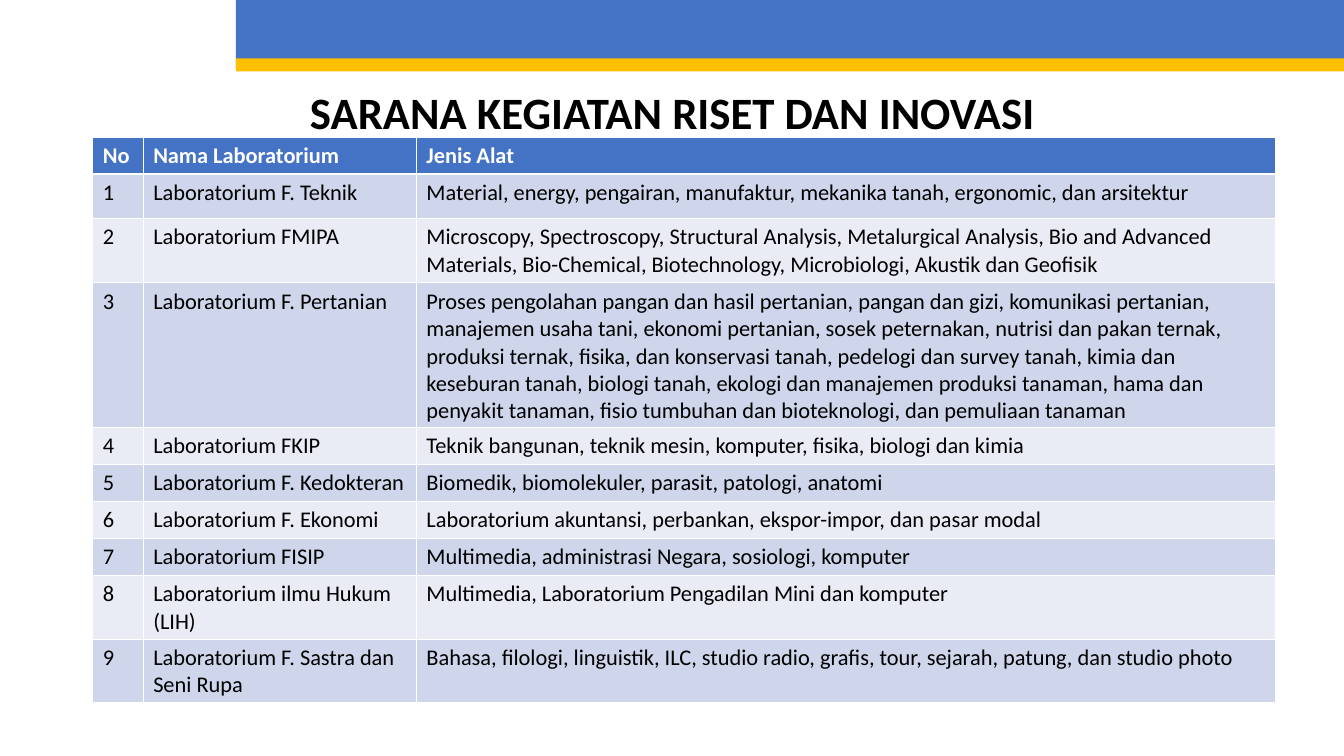
from dataclasses import dataclass

from pptx import Presentation
from pptx.dml.color import RGBColor
from pptx.enum.shapes import MSO_SHAPE
from pptx.enum.text import MSO_ANCHOR, PP_ALIGN
from pptx.util import Inches, Pt

RECTANGLE = MSO_SHAPE.RECTANGLE
MIDDLE = MSO_ANCHOR.MIDDLE
CENTER = PP_ALIGN.CENTER

SLIDE_WIDTH, SLIDE_HEIGHT = 13.33, 7.5
MARGIN = 0.92
BANNER_LEFT = 2.34
BANNER_WIDTH = SLIDE_WIDTH - BANNER_LEFT
COLUMN_WIDTHS = (0.5, 2.71, 8.52)
ROW_HEIGHT = 0.36
TALL_ROWS = {1: 0.44, 2: 0.64, 3: 0.62}


@dataclass(frozen=True)
class Theme:
    font: str = "Calibri"
    title_size: int = 32
    table_size: int = 16
    blue: str = "4472C4"
    gold: str = "FFC000"
    text: str = "000000"
    header_text: str = "FFFFFF"
    bands: tuple = ("CFD5EA", "E9EBF5")


THEME = Theme()

TITLE = "SARANA KEGIATAN RISET DAN INOVASI"
HEADER = ("No", "Nama Laboratorium", "Jenis Alat")
LABORATORIES = (
    ("Laboratorium F. Teknik",
     "Material, energy, pengairan, manufaktur, mekanika tanah, ergonomic, "
     "dan arsitektur"),
    ("Laboratorium FMIPA",
     "Microscopy, Spectroscopy, Structural Analysis, Metalurgical Analysis, "
     "Bio and Advanced Materials, Bio-Chemical, Biotechnology, Microbiologi, "
     "Akustik dan Geofisik"),
    ("Laboratorium F. Pertanian",
     "Proses pengolahan pangan dan hasil pertanian, pangan dan gizi, "
     "komunikasi pertanian, manajemen usaha tani, ekonomi pertanian, "
     "sosek peternakan, nutrisi dan pakan ternak, produksi ternak, fisika, "
     "dan konservasi tanah, pedelogi dan survey tanah, kimia dan keseburan "
     "tanah, biologi tanah, ekologi dan manajemen produksi tanaman, hama dan "
     "penyakit tanaman, fisio tumbuhan dan bioteknologi, dan pemuliaan tanaman"),
    ("Laboratorium FKIP",
     "Teknik bangunan, teknik mesin, komputer, fisika, biologi dan kimia"),
    ("Laboratorium F. Kedokteran",
     "Biomedik, biomolekuler, parasit, patologi, anatomi"),
    ("Laboratorium F. Ekonomi",
     "Laboratorium akuntansi, perbankan, ekspor-impor, dan pasar modal"),
    ("Laboratorium FISIP",
     "Multimedia, administrasi Negara, sosiologi, komputer"),
    ("Laboratorium ilmu Hukum (LIH)",
     "Multimedia, Laboratorium Pengadilan Mini dan komputer"),
    ("Laboratorium F. Sastra dan Seni Rupa",
     "Bahasa, filologi, linguistik, ILC, studio radio, grafis, tour, sejarah, "
     "patung, dan studio photo"),
)


def box(*lengths):
    return [Inches(length) for length in lengths]


def paint(target, color):
    target.fill.solid()
    target.fill.fore_color.rgb = RGBColor.from_string(color)


def write(paragraph, text, size, color, bold):
    run = paragraph.add_run()
    run.text = text
    formats = {"name": THEME.font, "size": Pt(size), "bold": bold}
    for name, value in formats.items():
        setattr(run.font, name, value)
    run.font.color.rgb = RGBColor.from_string(color)


def add_bar(slide, top, height, color):
    bar = slide.shapes.add_shape(
        RECTANGLE, *box(BANNER_LEFT, top, BANNER_WIDTH, height))
    bar.shadow.inherit = False
    bar.line.fill.background()
    paint(bar, color)


def add_title(slide):
    title = slide.shapes.add_textbox(*box(MARGIN, 0.74, 11.5, 0.8))
    frame = title.text_frame
    for name, value in {"word_wrap": True, "vertical_anchor": MIDDLE}.items():
        setattr(frame, name, value)
    paragraph = frame.paragraphs[0]
    for name, value in {"alignment": CENTER, "line_spacing": 0.9}.items():
        setattr(paragraph, name, value)
    write(paragraph, TITLE, THEME.title_size, THEME.text, True)


def add_laboratory_table(slide):
    numbered = [(str(number), *laboratory)
                for number, laboratory in enumerate(LABORATORIES, 1)]
    rows = [HEADER, *numbered]
    heights = [TALL_ROWS.get(index, ROW_HEIGHT) for index in range(len(rows))]
    table = slide.shapes.add_table(
        len(rows), len(HEADER),
        *box(MARGIN, 1.36, sum(COLUMN_WIDTHS), sum(heights))).table
    for column, width in zip(table.columns, COLUMN_WIDTHS):
        column.width = Inches(width)
    for index, (row, height, texts) in enumerate(zip(table.rows, heights, rows)):
        row.height = Inches(height)
        is_header = index == 0
        fill = THEME.blue if is_header else THEME.bands[(index - 1) % 2]
        color = THEME.header_text if is_header else THEME.text
        for cell, text in zip(row.cells, texts):
            paint(cell, fill)
            write(cell.text_frame.paragraphs[0], text,
                  THEME.table_size, color, is_header)


def main():
    presentation = Presentation()
    presentation.slide_width = Inches(SLIDE_WIDTH)
    presentation.slide_height = Inches(SLIDE_HEIGHT)
    slide = presentation.slides.add_slide(presentation.slide_layouts[6])

    # Banner
    add_bar(slide, 0, 0.68, THEME.blue)
    add_bar(slide, 0.58, 0.13, THEME.gold)

    # Title and table
    add_title(slide)
    add_laboratory_table(slide)

    presentation.save("out.pptx")


if __name__ == "__main__":
    main()
